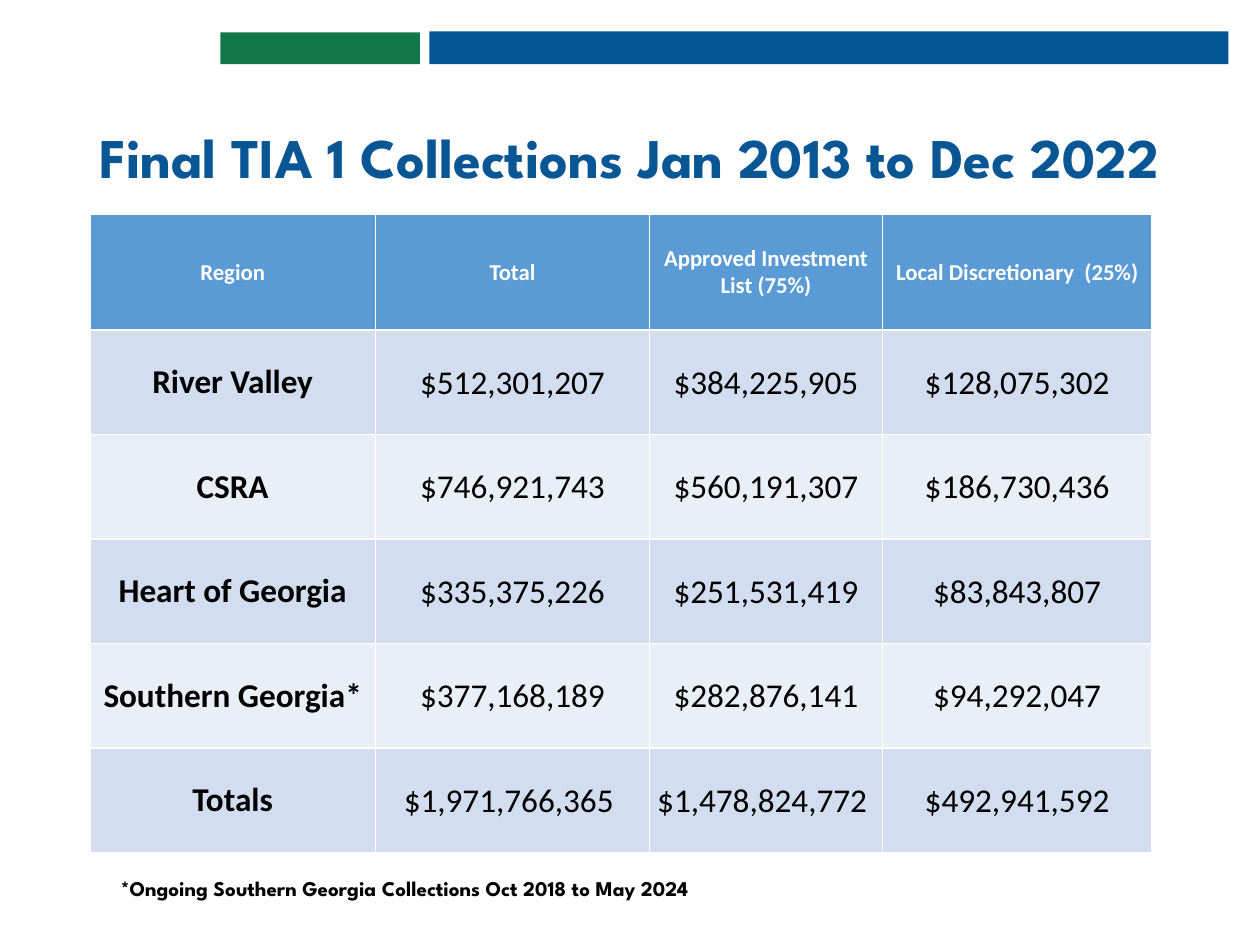
from pptx import Presentation
from pptx.dml.color import RGBColor
from pptx.enum.shapes import MSO_SHAPE
from pptx.enum.text import MSO_ANCHOR, MSO_AUTO_SIZE, PP_ALIGN
from pptx.util import Pt

RECT = MSO_SHAPE.RECTANGLE
MIDDLE, BOTTOM = MSO_ANCHOR.MIDDLE, MSO_ANCHOR.BOTTOM
LEFT, CENTER = PP_ALIGN.LEFT, PP_ALIGN.CENTER
NO_FIT = MSO_AUTO_SIZE.NONE

COLORS = {
    "blue": "035594", "green": "12784B", "title": "085694",
    "header": "5B9BD5", "band_dark": "D2DEEF", "band_light": "EAEFF7",
    "white": "FFFFFF", "black": "000000",
}
HEADING_FONT, TABLE_FONT = "League Spartan", "Calibri"

COLUMN_WIDTHS = [163.3, 156.5, 133.2, 153.9]
HEADER_HEIGHT, ROW_HEIGHT = 66, 59.7
ROWS = [
    ["Region", "Total", "Approved Investment List (75%)", "Local Discretionary  (25%)"],
    ["River Valley", "$512,301,207", "$384,225,905", "$128,075,302"],
    ["CSRA", "$746,921,743", "$560,191,307", "$186,730,436"],
    ["Heart of Georgia", "$335,375,226", "$251,531,419", "$83,843,807"],
    ["Southern Georgia*", "$377,168,189", "$282,876,141", "$94,292,047"],
    ["Totals", "$1,971,766,365 ", "$1,478,824,772 ", "$492,941,592"],
]


def color(name):
    return RGBColor.from_string(COLORS[name])


def format_paragraph(p, size, font, color_name, bold, align):
    p.alignment = align
    p.font.size = Pt(size)
    p.font.name = font
    p.font.bold = bold
    p.font.color.rgb = color(color_name)


def add_bar(slide, x, y, w, h, color_name):
    sp = slide.shapes.add_shape(RECT, Pt(x), Pt(y), Pt(w), Pt(h))
    sp.shadow.inherit = False
    sp.fill.solid()
    sp.fill.fore_color.rgb = color(color_name)
    sp.line.fill.background()


def add_header_bars(slide, x, y, w, h):
    """Place a short green bar and a long blue one, their bottoms level."""
    green_w, gap = 114, 5.4
    blue_x = green_w + gap
    add_bar(slide, x + blue_x, y, w - blue_x, h, "blue")
    add_bar(slide, x, y + 0.5, green_w, h - 0.5, "green")


def set_heading(sp, x, y, w, h, text, size, color_name, align):
    """Fill a title or text box with one bold line resting on its bottom edge."""
    sp.left, sp.top, sp.width, sp.height = Pt(x), Pt(y), Pt(w), Pt(h)
    tf = sp.text_frame
    tf.text = text
    tf.word_wrap = True
    tf.auto_size = NO_FIT
    tf.vertical_anchor = BOTTOM
    p = tf.paragraphs[0]
    p.line_spacing = 0.9
    format_paragraph(p, size, HEADING_FONT, color_name, True, align)


def fill_cell(cell, text, row, col):
    cell.text = text
    cell.vertical_anchor = MIDDLE
    header = row == 0
    if not header and col > 0:
        cell.margin_left = cell.margin_right = cell.margin_top = Pt(0.7)
        cell.margin_bottom = Pt(0)
    band = "band_dark" if row % 2 else "band_light"
    cell.fill.solid()
    cell.fill.fore_color.rgb = color("header" if header else band)
    format_paragraph(cell.text_frame.paragraphs[0], 13 if header else 19, TABLE_FONT,
                     "white" if header else "black", header or col == 0, CENTER)


def add_collections_table(slide, x, y):
    """Add the table; its default style draws the white borders."""
    height = HEADER_HEIGHT + ROW_HEIGHT * (len(ROWS) - 1)
    table = slide.shapes.add_table(len(ROWS), len(COLUMN_WIDTHS), Pt(x), Pt(y),
                                   Pt(sum(COLUMN_WIDTHS)), Pt(height)).table
    for column, width in zip(table.columns, COLUMN_WIDTHS):
        column.width = Pt(width)
    for r, values in enumerate(ROWS):
        table.rows[r].height = Pt(ROW_HEIGHT if r else HEADER_HEIGHT)
        for c, text in enumerate(values):
            fill_cell(table.cell(r, c), text, r, c)


def main():
    prs = Presentation()
    prs.slide_width, prs.slide_height = Pt(720), Pt(540)
    slide = prs.slides.add_slide(prs.slide_layouts[5])

    add_header_bars(slide, 126, 18, 576, 18.7)
    set_heading(slide.shapes.title, 0, 67, 720, 45.4,
                "Final TIA 1 Collections Jan 2013 to Dec 2022", 32, "title", CENTER)
    add_collections_table(slide, 51.3, 122.6)
    footnote = slide.shapes.add_textbox(0, 0, 0, 0)
    set_heading(footnote, 62, 492.5, 366, 26,
                "*Ongoing Southern Georgia Collections Oct 2018 to May 2024", 12, "black", LEFT)

    prs.save("out.pptx")


if __name__ == "__main__":
    main()
